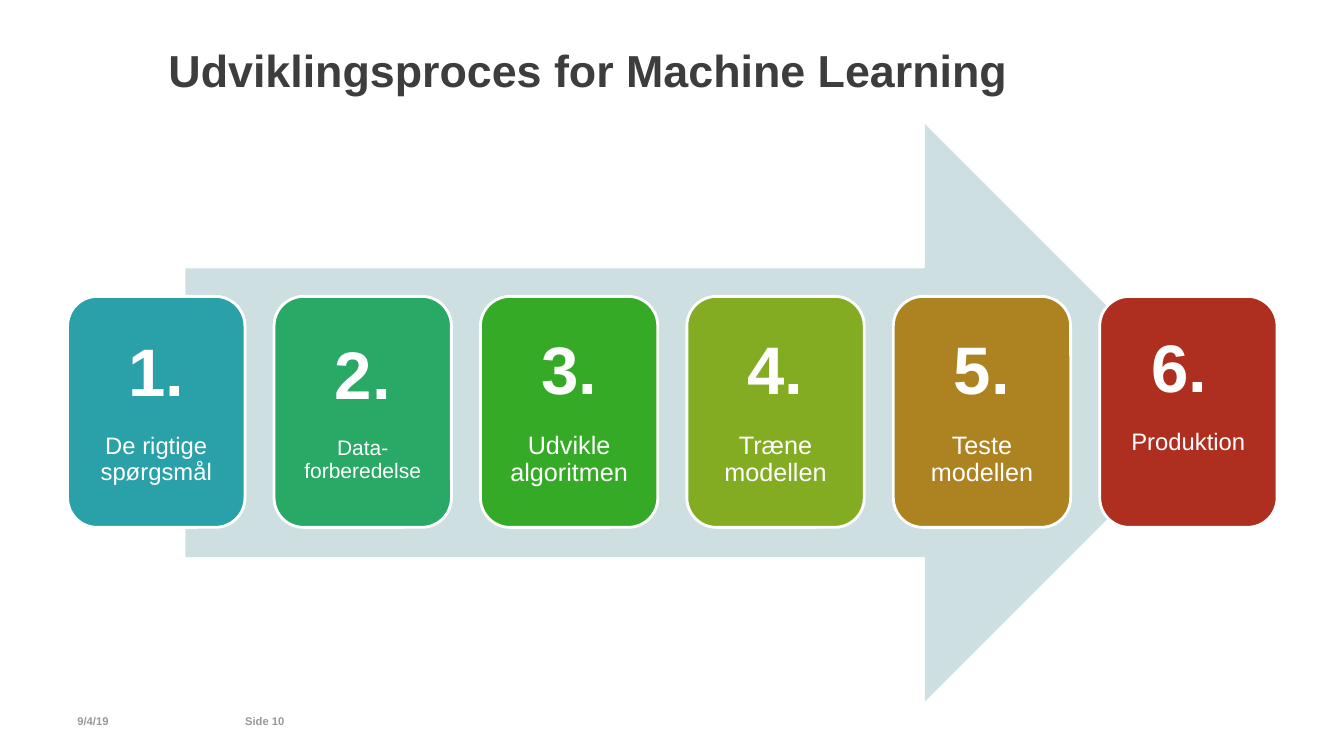
from pptx import Presentation
from pptx.dml.color import RGBColor
from pptx.enum.shapes import MSO_SHAPE as Shape
from pptx.enum.text import MSO_ANCHOR as Anchor, PP_ALIGN as Align
from pptx.util import Pt

COLORS = {
    "title": "3C3D3C",
    "footer": "989898",
    "arrow": "CDDFE1",
    "white": "FFFFFF",
    "teal": "2AA0A8",
    "sea": "28A965",
    "green": "35AA26",
    "olive": "84AC23",
    "ochre": "AD8221",
    "red": "AE2E1F",
}

# Number, label, label size, fill, bottom inset
STEPS = [
    ("1.", "De rigtige spørgsmål", 17, "teal", 14),
    ("2.", "Data-forberedelse", 15, "sea", 14),
    ("3.", "Udvikle algoritmen", 18, "green", 14),
    ("4.", "Træne modellen", 18, "olive", 14),
    ("5.", "Teste modellen", 18, "ochre", 14),
    ("6. ", "Produktion", 17, "red", 38),
]
STEP_LEFT, STEP_TOP, STEP_PITCH = 48.3, 211.7, 147.45
STEP_WIDTH, STEP_HEIGHT = 126.7, 165


def style(paragraph, size, color, bold):
    font = paragraph.font
    font.name = "Arial"
    font.size = Pt(size)
    font.bold = bold
    font.color.rgb = RGBColor.from_string(COLORS[color])


def add_filled(slide, preset, color, left, top, width, height):
    """Add a preset shape with a plain fill and no shadow."""
    shape = slide.shapes.add_shape(preset, Pt(left), Pt(top), Pt(width), Pt(height))
    shape.shadow.inherit = False
    shape.fill.solid()
    shape.fill.fore_color.rgb = RGBColor.from_string(COLORS[color])
    return shape


presentation = Presentation()
presentation.slide_width, presentation.slide_height = Pt(960), Pt(540)
slide = presentation.slides.add_slide(presentation.slide_layouts[5])

title = slide.shapes.title
title.left, title.top, title.width, title.height = Pt(77.8), Pt(30.2), Pt(882), Pt(39)
title_frame = title.text_frame
title_frame.text = "Udviklingsproces for Machine Learning"
title_frame.vertical_anchor = Anchor.MIDDLE
title_frame.margin_left = Pt(42.5)
title_frame.margin_top = title_frame.margin_right = title_frame.margin_bottom = 0
title_frame.paragraphs[0].alignment = Align.LEFT
style(title_frame.paragraphs[0], 32, "title", True)

for text, left, width in [("9/4/19", 48.2, 128), ("Side 10", 168, 96)]:
    footer = slide.shapes.add_textbox(Pt(left), Pt(500.4), Pt(width), Pt(28.8))
    footer_frame = footer.text_frame
    footer_frame.word_wrap = True
    footer_frame.vertical_anchor = Anchor.MIDDLE
    footer_frame.text = text
    style(footer_frame.paragraphs[0], 8, "footer", True)

arrow = add_filled(slide, Shape.RIGHT_ARROW, "arrow", 132.5, 88.5, 734.4, 412.6)
arrow.line.fill.background()

for index, (number, label, label_size, color, bottom) in enumerate(STEPS):
    left = STEP_LEFT + index * STEP_PITCH
    step = add_filled(slide, Shape.ROUNDED_RECTANGLE, color,
                      left, STEP_TOP, STEP_WIDTH, STEP_HEIGHT)
    step.line.color.rgb = RGBColor.from_string(COLORS["white"])
    step.line.width = Pt(2)

    frame = step.text_frame
    frame.word_wrap = True
    frame.vertical_anchor = Anchor.MIDDLE
    frame.margin_left = frame.margin_right = frame.margin_top = Pt(14)
    frame.margin_bottom = Pt(bottom)
    frame.text = f"{number}\n{label}"
    number_paragraph, label_paragraph = frame.paragraphs
    number_paragraph.space_after = Pt(17)
    style(number_paragraph, 48, "white", True)
    style(label_paragraph, label_size, "white", False)
    for paragraph in frame.paragraphs:
        paragraph.alignment = Align.CENTER
        paragraph.line_spacing = 0.9

presentation.save("out.pptx")
